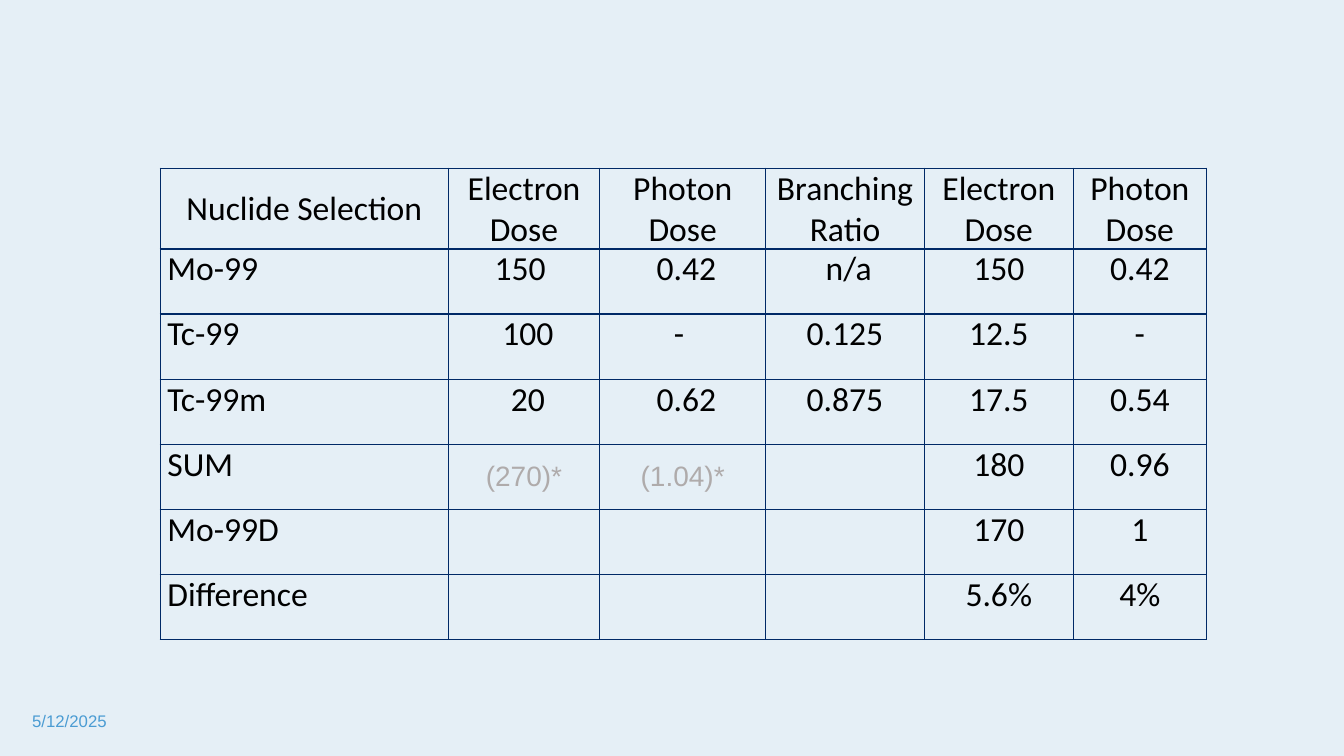
from lxml.etree import SubElement
from pptx import Presentation
from pptx.dml.color import RGBColor
from pptx.enum.text import MSO_ANCHOR, PP_ALIGN
from pptx.oxml.ns import qn
from pptx.util import Cm, Pt

WIDTHS = [7.26, 3.81, 4.19, 3.99, 3.76, 3.35]
HEIGHT = 1.64
ROWS = [
    ["Nuclide Selection", "Electron Dose", "Photon Dose",
     "Branching Ratio", "Electron Dose", "Photon Dose"],
    ["Mo-99", "150 ", " 0.42", " n/a", "150", "0.42"],
    ["Tc-99", " 100", "- ", "0.125", "12.5", "-"],
    ["Tc-99m", " 20", " 0.62", "0.875", "17.5", "0.54"],
    ["SUM", "(270)*", "(1.04)*", "", "180", "0.96"],
    ["Mo-99D", "", "", "", "170", "1"],
    ["Difference", "", "", "", "5.6%", "4%"],
]


def color(code):
    """Turn a hex string into a colour."""
    return RGBColor.from_string(code)


def style(para, name, size, code):
    """Format the runs of a paragraph."""
    for run in para.runs:
        run.font.name = name
        run.font.size = Pt(size)
        run.font.color.rgb = color(code)


def border(cell, code, width):
    """Draw a solid line on all four sides of a cell."""
    props = cell._tc.get_or_add_tcPr()
    for side in ("a:lnL", "a:lnR", "a:lnT", "a:lnB"):
        line = SubElement(props, qn(side), w=str(Pt(width)))
        fill = SubElement(line, qn("a:solidFill"))
        SubElement(fill, qn("a:srgbClr"), val=code)


def fill_cell(cell, text, head, first):
    """Write and format one table cell."""
    note = text.endswith("*")
    border(cell, "002966", 1)
    cell.fill.background()
    cell.margin_left = cell.margin_right = Cm(0.18)
    cell.margin_top = cell.margin_bottom = Cm(0)
    cell.vertical_anchor = MSO_ANCHOR.MIDDLE if head or note else MSO_ANCHOR.TOP
    cell.text_frame.text = text
    para = cell.text_frame.paragraphs[0]
    para.alignment = PP_ALIGN.JUSTIFY if first and not head else PP_ALIGN.CENTER
    if note:
        style(para, "Arial", 20, "AFABAB")
    else:
        style(para, "Calibri", 24, "000000")


def add_doses(slide):
    """Add the table of doses by nuclide."""
    frame = slide.shapes.add_table(
        len(ROWS), len(WIDTHS), Cm(4.04), Cm(4.24),
        Cm(sum(WIDTHS)), Cm(HEIGHT * len(ROWS)))
    table = frame.table
    table.first_row = table.horz_banding = False
    for col, width in zip(table.columns, WIDTHS):
        col.width = Cm(width)
    for i, (row, texts) in enumerate(zip(table.rows, ROWS)):
        row.height = Cm(HEIGHT)
        for j, text in enumerate(texts):
            fill_cell(row.cells[j], text, i == 0, j == 0)


def add_date(slide, text):
    """Add the date at the lower left."""
    box = slide.shapes.add_textbox(Cm(0.56), Cm(17.65), Cm(7.62), Cm(1.02))
    frame = box.text_frame
    frame.word_wrap = True
    frame.vertical_anchor = MSO_ANCHOR.MIDDLE
    frame.text = text
    style(frame.paragraphs[0], "Arial", 12, "4B9CD3")


def main():
    """Build the slide and save it."""
    deck = Presentation()
    deck.slide_width, deck.slide_height = Cm(33.87), Cm(19.05)
    slide = deck.slides.add_slide(deck.slide_layouts[6])
    back = slide.background.fill
    back.solid()
    back.fore_color.rgb = color("E5EFF6")
    add_date(slide, "5/12/2025")
    add_doses(slide)
    deck.save("out.pptx")


if __name__ == "__main__":
    main()
